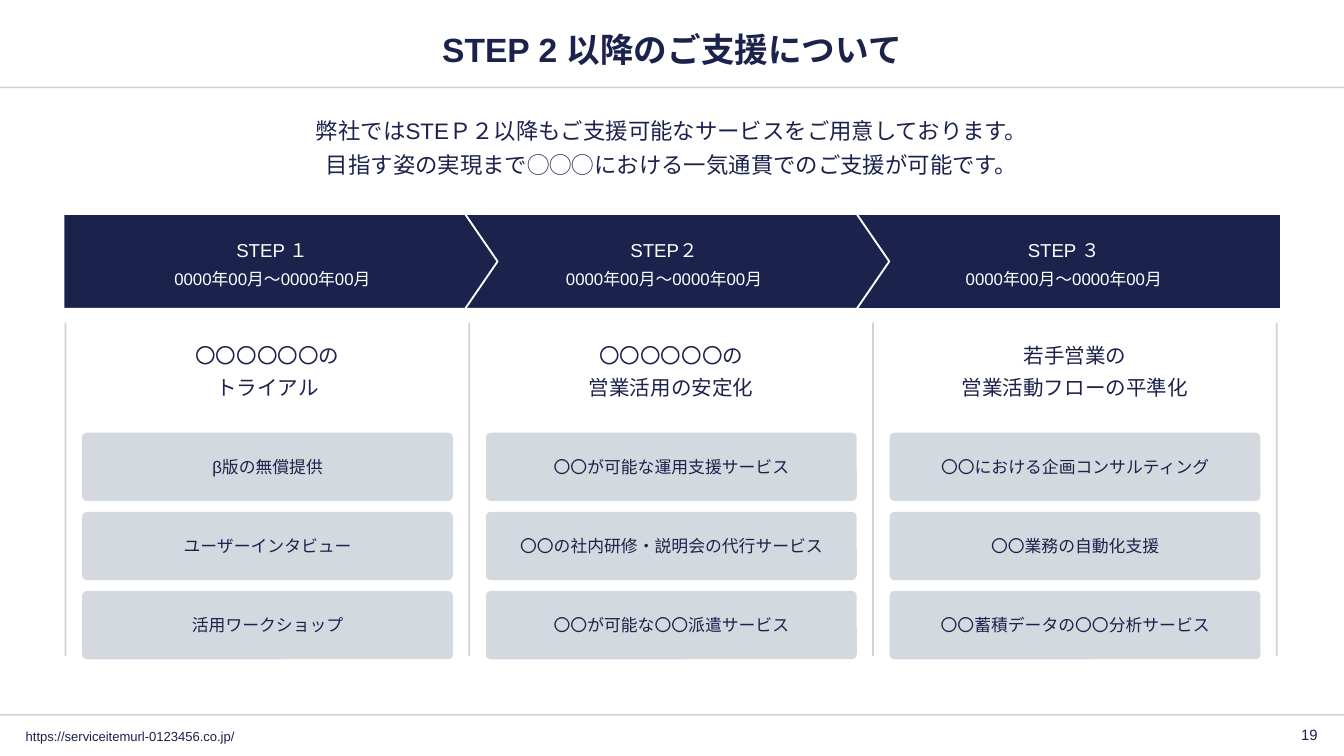
from lxml import etree
from pptx import Presentation
from pptx.dml.color import RGBColor
from pptx.enum import shapes, text
from pptx.oxml import ns
from pptx.util import Pt

NAVY, GREY, WHITE = "1B224C", "D4D9DF", "FFFFFF"
FONT = "Arial"
CENTER, LEFT, RIGHT = text.PP_ALIGN.CENTER, text.PP_ALIGN.LEFT, text.PP_ALIGN.RIGHT
MIDDLE, TOP = text.MSO_ANCHOR.MIDDLE, text.MSO_ANCHOR.TOP

TITLE = "STEP 2 以降のご支援について"
LEAD = [
    "弊社ではSTEＰ２以降もご支援可能なサービスをご用意しております。",
    "目指す姿の実現まで◯◯◯における一気通貫でのご支援が可能です。",
]
URL = "https://serviceitemurl-0123456.co.jp/"
PAGE = "19"
PERIOD = "0000年00月～0000年00月"
STEPS = [
    ("STEP １", ["〇〇〇〇〇〇の", "トライアル"],
     ["β版の無償提供", "ユーザーインタビュー", "活用ワークショップ"]),
    ("STEP２", ["〇〇〇〇〇〇の", "営業活用の安定化"],
     ["〇〇が可能な運用支援サービス", "〇〇の社内研修・説明会の代行サービス",
      "〇〇が可能な〇〇派遣サービス"]),
    ("STEP ３", ["若手営業の", "営業活動フローの平準化"],
     ["〇〇における企画コンサルティング", "〇〇業務の自動化支援",
      "〇〇蓄積データの〇〇分析サービス"]),
]

WIDTH, HEIGHT = 720, 405
ARROW_LEFT, ARROW_STEP, ARROW_TOP, ARROW_WIDTH, ARROW_HEIGHT = 34, 209.8, 114.7, 232.6, 50.8
RULE_LEFT, COLUMN_STEP, RULE_TOP, RULE_BOTTOM = 35.1, 216.3, 172.8, 351.5
CARD_LEFT, CARD_WIDTH = 44, 198.7
CARD_TOP, CARD_STEP, CARD_HEIGHT = 231.8, 42.4, 36.6

presentation = Presentation()
presentation.slide_width, presentation.slide_height = Pt(WIDTH), Pt(HEIGHT)
slide = presentation.slides.add_slide(presentation.slide_layouts[5])


def color(value):
    return RGBColor.from_string(value)


def write(shape, lines, sizes, fill=NAVY, align=CENTER, anchor=MIDDLE,
          insets=(3, 3, 3, 3), after=0, bold=False):
    frame = shape.text_frame
    frame.text = "\n".join(lines)
    frame.word_wrap = True
    frame.auto_size = text.MSO_AUTO_SIZE.NONE
    frame.vertical_anchor = anchor
    (frame.margin_left, frame.margin_top,
     frame.margin_right, frame.margin_bottom) = map(Pt, insets)
    for index, (paragraph, size) in enumerate(zip(frame.paragraphs, sizes)):
        paragraph.alignment = align
        if index:
            paragraph.space_before, paragraph.space_after = Pt(4), Pt(after)
        for run in paragraph.runs:
            font = run.font
            font.name, font.size, font.bold = FONT, Pt(size), bold
            font.color.rgb = color(fill)
            east_asian = etree.SubElement(run._r.get_or_add_rPr(), ns.qn("a:ea"))
            east_asian.set("typeface", FONT)


def add_text(box, lines, sizes, **options):
    write(slide.shapes.add_textbox(*map(Pt, box)), lines, sizes, **options)


def add_block(kind, box, fill, adjustment):
    shape = slide.shapes.add_shape(kind, *map(Pt, box))
    shape.shadow.inherit = False
    shape.adjustments[0] = adjustment
    shape.fill.solid()
    shape.fill.fore_color.rgb = color(fill)
    return shape


def add_rule(x1, y1, x2, y2, weight):
    rule = slide.shapes.add_connector(
        shapes.MSO_CONNECTOR.STRAIGHT, *map(Pt, (x1, y1, x2, y2)))
    rule.line.width = Pt(weight)
    rule.line.color.rgb = color(NAVY)
    properties = rule._element.spPr
    tone = properties.find(".//" + ns.qn("a:srgbClr"))
    etree.SubElement(tone, ns.qn("a:alpha")).set("val", "20000")
    etree.SubElement(properties, ns.qn("a:effectLst"))


for y in (46.8, 383):
    add_rule(0, y, WIDTH, y, 0.75)

title = slide.shapes.title
title.left, title.top, title.width, title.height = map(Pt, (34, 12.2, 652, 28))
write(title, [TITLE], [18], bold=True)
add_text((34, 59.8, 652, 36.7), LEAD, [12, 12], anchor=TOP)
add_text((10.8, 387.4, 255, 14.4), [URL], [7], align=LEFT)
add_text((681, 386.6, 28, 14.4), [PAGE], [8], align=RIGHT)

for index, (name, goal, services) in reversed(list(enumerate(STEPS))):
    is_last = index == len(STEPS) - 1
    arrow = add_block(
        shapes.MSO_SHAPE.PENTAGON,
        (ARROW_LEFT + index * ARROW_STEP, ARROW_TOP, ARROW_WIDTH, ARROW_HEIGHT),
        NAVY, 0 if is_last else 0.343)
    arrow.line.color.rgb = color(WHITE)
    arrow.line.width = Pt(1)
    write(arrow, [name, PERIOD], [10, 9], fill=WHITE, insets=(3, 6, 3, 3), after=4)

for index in range(len(STEPS) + 1):
    x = RULE_LEFT + index * COLUMN_STEP
    add_rule(x, RULE_TOP, x, RULE_BOTTOM, 1)

for column, (name, goal, services) in enumerate(STEPS):
    left = CARD_LEFT + column * COLUMN_STEP
    add_text((left, 179.3, CARD_WIDTH, 39.6), goal, [11, 11])
    for row, service in enumerate(services):
        card = add_block(
            shapes.MSO_SHAPE.ROUNDED_RECTANGLE,
            (left, CARD_TOP + row * CARD_STEP, CARD_WIDTH, CARD_HEIGHT), GREY, 0.073)
        card.line.fill.background()
        write(card, [service], [9], insets=(7.2, 3.6, 7.2, 3.6))

presentation.save("out.pptx")
